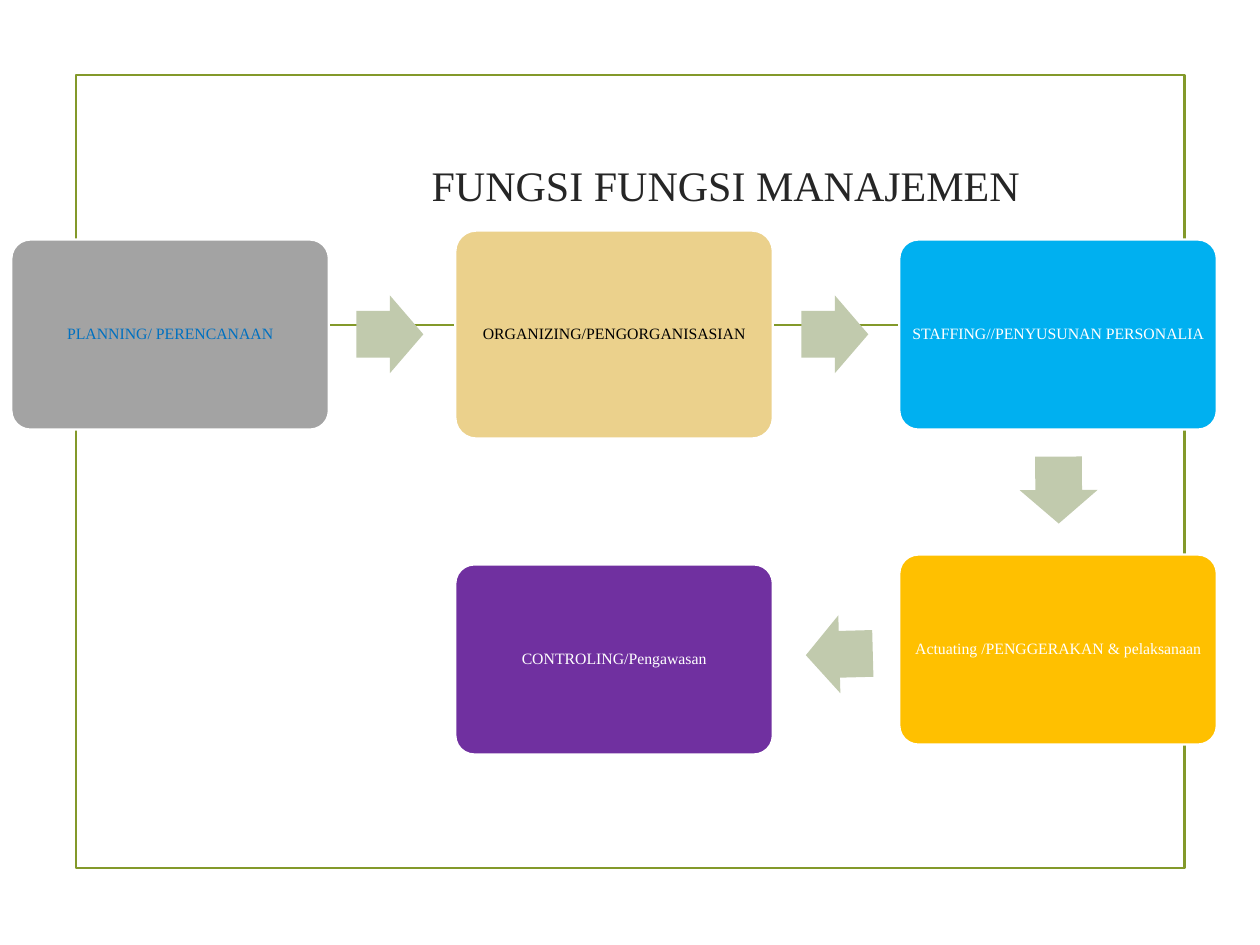
"""Build a slide showing the five management functions as a flow of boxes."""
import pptx
import pptx.dml.color
import pptx.enum.shapes
import pptx.enum.text
import pptx.oxml.ns
import pptx.util
from lxml import etree

Cm, Pt = pptx.util.Cm, pptx.util.Pt
RGBColor = pptx.dml.color.RGBColor
SHAPE = pptx.enum.shapes.MSO_SHAPE

GREEN = RGBColor(0x83, 0x99, 0x2A)
SAGE = RGBColor(0xC1, 0xCA, 0xAD)
GREY = RGBColor(0xA3, 0xA3, 0xA3)
SAND = RGBColor(0xEB, 0xD1, 0x8C)
SKY = RGBColor(0x00, 0xB0, 0xF0)
AMBER = RGBColor(0xFF, 0xC0, 0x00)
PURPLE = RGBColor(0x70, 0x30, 0xA0)
BLUE = RGBColor(0x00, 0x70, 0xC0)
DARK = RGBColor(0x26, 0x26, 0x26)
BLACK = RGBColor(0, 0, 0)
WHITE = RGBColor(0xFF, 0xFF, 0xFF)

FONT = "Times New Roman"
TITLE = "FUNGSI FUNGSI MANAJEMEN"
STEPS = [
    ("PLANNING/ PERENCANAAN", 0, 4.83, 3.83, GREY, BLUE),
    ("ORGANIZING/PENGORGANISASIAN", 1, 4.65, 4.19, SAND, BLACK),
    ("STAFFING//PENYUSUNAN PERSONALIA", 2, 4.83, 3.83, SKY, WHITE),
    ("Actuating /PENGGERAKAN & pelaksanaan", 2, 11.18, 3.83, AMBER, WHITE),
    ("CONTROLING/Pengawasan", 1, 11.38, 3.83, PURPLE, WHITE),
]
ARROWS = [(7.86, 6.74, 0), (16.83, 6.74, 0), (21.34, 9.88, 89.8), (16.92, 13.19, 178.5)]
FIRST_LEFT, COLUMN_STEP, BOX_WIDTH = 0.23, 8.95, 6.4
ARROW_WIDTH, ARROW_HEIGHT = 1.35, 1.57


def add_shape(page, kind, left, top, width, height, fill=None, line=None):
    shape = page.shapes.add_shape(kind, Cm(left), Cm(top), Cm(width), Cm(height))
    shape.shadow.inherit = False
    if fill is None:
        shape.fill.background()
    else:
        shape.fill.solid()
        shape.fill.fore_color.rgb = fill
    if line is None:
        shape.line.fill.background()
    else:
        shape.line.color.rgb = line
        shape.line.width = Pt(1.25)
    return shape


def write(box, text, size, color):
    frame = box.text_frame
    frame.text = text
    frame.word_wrap = True
    frame.vertical_anchor = pptx.enum.text.MSO_ANCHOR.MIDDLE
    para = frame.paragraphs[0]
    para.alignment = pptx.enum.text.PP_ALIGN.CENTER
    span = para.runs[0]
    span.font.name, span.font.size = FONT, Pt(size)
    span.font.color.rgb = color
    return frame


def add_rule(page, left, right, y):
    rule = page.shapes.add_connector(
        pptx.enum.shapes.MSO_CONNECTOR.STRAIGHT, Cm(left), Cm(y), Cm(right), Cm(y))
    rule.line.color.rgb = GREEN
    rule.line.width = Pt(1.25)
    properties = rule.element.find(pptx.oxml.ns.qn("p:spPr"))
    etree.SubElement(properties, pptx.oxml.ns.qn("a:effectLst"))


def add_step(page, text, column, top, height, fill, color):
    left = FIRST_LEFT + column * COLUMN_STEP
    box = add_shape(page, SHAPE.ROUNDED_RECTANGLE, left, top, BOX_WIDTH, height, fill, WHITE)
    box.adjustments[0] = 0.1
    frame = write(box, text, 9, color)
    frame.margin_left = frame.margin_right = frame.margin_top = frame.margin_bottom = 0
    frame.paragraphs[0].line_spacing = 0.9


def add_arrow(page, center_x, center_y, rotation):
    arrow = add_shape(page, SHAPE.RIGHT_ARROW, center_x - ARROW_WIDTH / 2,
                      center_y - ARROW_HEIGHT / 2, ARROW_WIDTH, ARROW_HEIGHT, SAGE)
    arrow.adjustments[0], arrow.adjustments[1] = 0.6, 0.5
    arrow.rotation = rotation


def main():
    deck = pptx.Presentation()
    deck.slide_width, deck.slide_height = Cm(25.4), Cm(19.05)
    page = deck.slides.add_slide(deck.slide_layouts[6])
    add_shape(page, SHAPE.RECTANGLE, 1.54, 1.51, 22.34, 15.99, line=GREEN)
    add_rule(page, 3.56, 21.87, 6.55)
    title = page.shapes.add_textbox(Cm(4.88), Cm(1.52), Cm(19.5), Cm(4.4))
    write(title, TITLE, 24, DARK)
    for step in STEPS:
        add_step(page, *step)
    for arrow in ARROWS:
        add_arrow(page, *arrow)
    deck.save("out.pptx")


if __name__ == "__main__":
    main()
